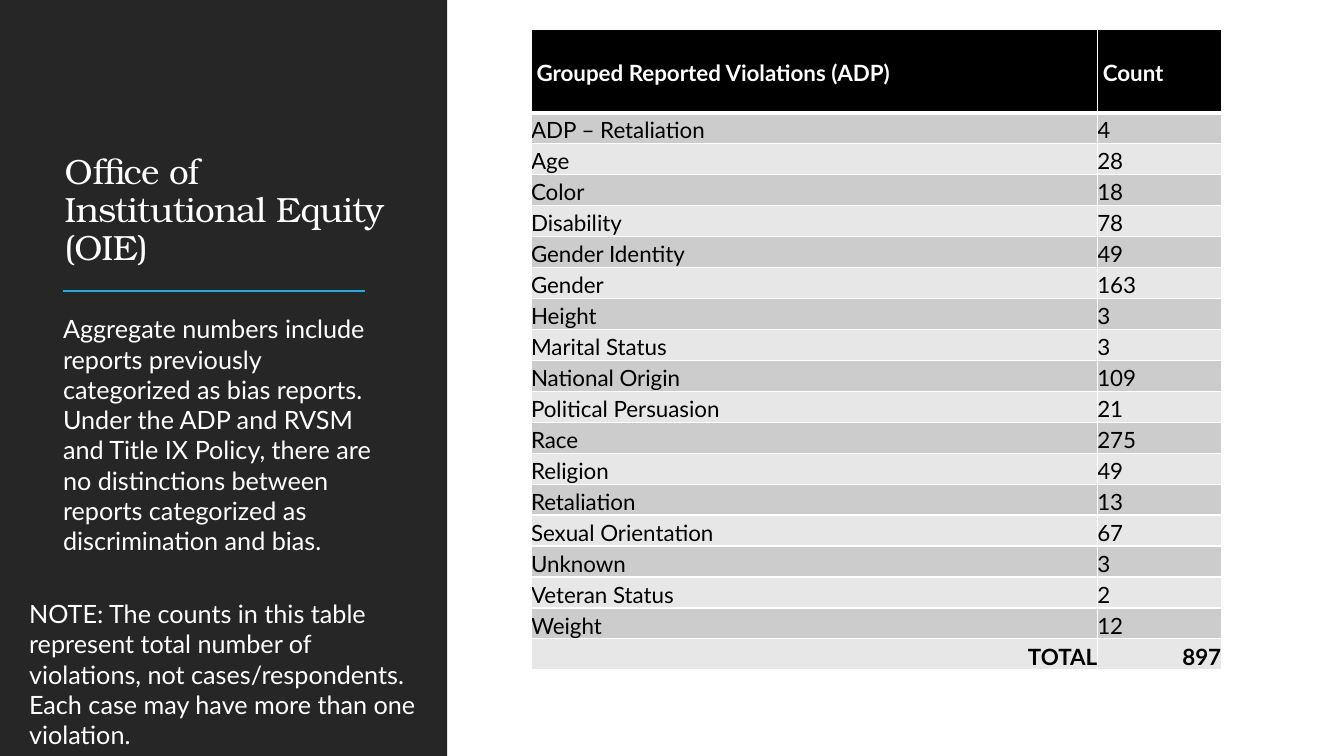
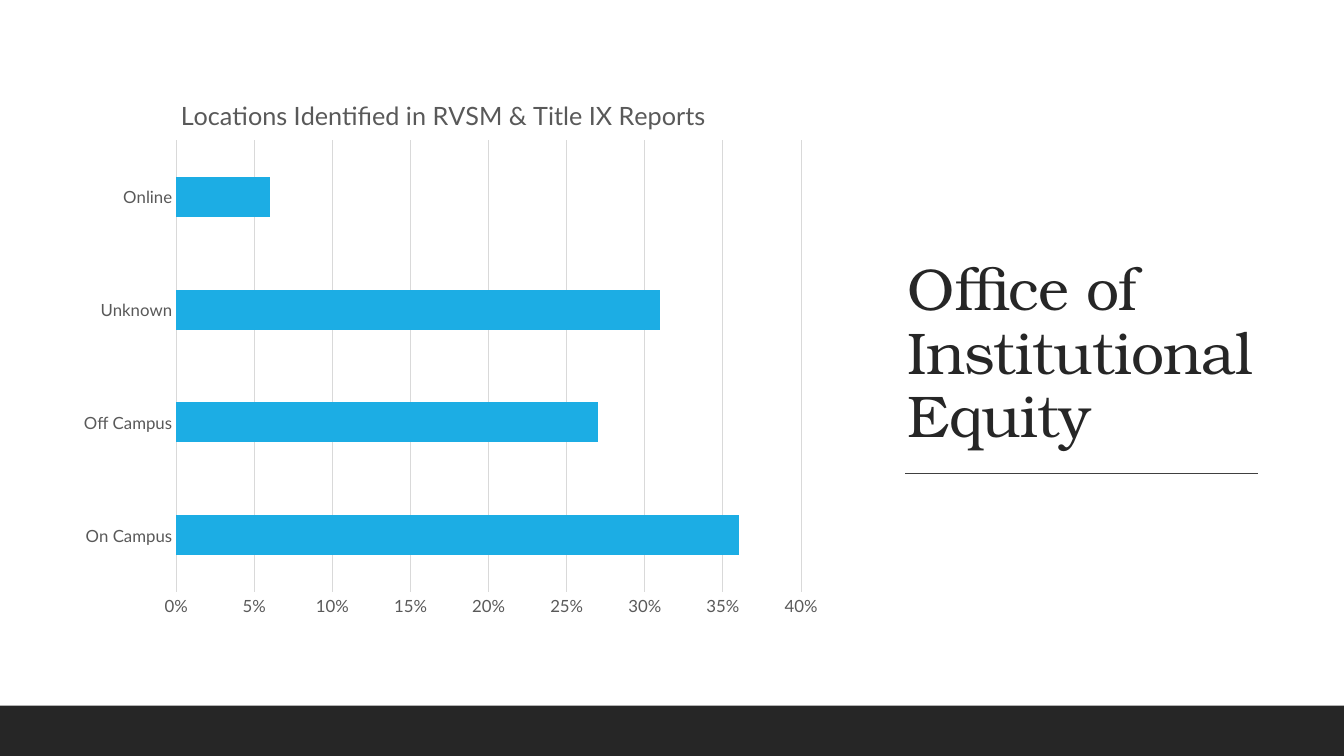
from dataclasses import dataclass
from typing import NamedTuple

from lxml.etree import SubElement
from pptx import Presentation
from pptx.chart.data import CategoryChartData
from pptx.dml.color import RGBColor
from pptx.enum.chart import XL_CHART_TYPE, XL_TICK_MARK
from pptx.enum.shapes import MSO_CONNECTOR, MSO_SHAPE
from pptx.enum.text import MSO_ANCHOR, MSO_AUTO_SIZE, PP_ALIGN
from pptx.oxml.ns import qn
from pptx.util import Pt


@dataclass(frozen=True)
class Theme:
    dark: str = "262626"
    white: str = "FFFFFF"
    black: str = "000000"
    accent: str = "1CADE4"
    rule: str = "404040"
    label: str = "595959"
    grid: str = "D9D9D9"
    row_odd: str = "CCCCCC"
    row_even: str = "E7E7E7"
    title_font: str = "TeX Gyre Bonum"
    body_font: str = "Lato"
    panel_title: float = 25
    big_title: float = 42
    body: float = 18
    table: float = 16
    axis: float = 12


class Box(NamedTuple):
    x: float
    y: float
    w: float
    h: float

    def pts(self):
        return [Pt(v) for v in self]


class Violation(NamedTuple):
    name: str
    count: int


class Location(NamedTuple):
    name: str
    share: float


T = Theme()
SLIDE_W, SLIDE_H = 960, 540
TITLE_ONLY = 5

VIOLATIONS = [
    Violation("ADP – Retaliation", 4),
    Violation("Age", 28),
    Violation("Color", 18),
    Violation("Disability", 78),
    Violation("Gender Identity", 49),
    Violation("Gender", 163),
    Violation("Height", 3),
    Violation("Marital Status", 3),
    Violation("National Origin", 109),
    Violation("Political Persuasion", 21),
    Violation("Race", 275),
    Violation("Religion", 49),
    Violation("Retaliation", 13),
    Violation("Sexual Orientation", 67),
    Violation("Unknown", 3),
    Violation("Veteran Status", 2),
    Violation("Weight", 12),
]

LOCATIONS = [
    Location("On Campus", 0.36),
    Location("Off Campus", 0.27),
    Location("Unknown", 0.31),
    Location("Online", 0.06),
]


# Shared parts
def rgb(color: str) -> RGBColor:
    return RGBColor.from_string(color)


def set_font(font, size: float, color: str, name: str = T.body_font, bold: bool = False) -> None:
    font.name, font.size, font.bold = name, Pt(size), bold
    font.color.rgb = rgb(color)


def add_title(s, text: str, box: Box, size: float, color: str):
    sp = s.shapes.title
    sp.left, sp.top, sp.width, sp.height = box.pts()
    tf = sp.text_frame
    tf.text = text
    tf.word_wrap = True
    tf.auto_size = MSO_AUTO_SIZE.NONE
    tf.vertical_anchor = MSO_ANCHOR.BOTTOM
    p = tf.paragraphs[0]
    p.alignment = PP_ALIGN.LEFT
    p.line_spacing = 0.9
    set_font(p.font, size, color, T.title_font)
    for props in sp.element.iter(qn("a:defRPr")):
        props.set("spc", "-50")


def add_band(s, box: Box) -> None:
    """Dark band, placed behind the title."""
    sp = s.shapes.add_shape(MSO_SHAPE.RECTANGLE, *box.pts())
    sp.shadow.inherit = False
    sp.fill.solid()
    sp.fill.fore_color.rgb = rgb(T.dark)
    sp.line.fill.background()
    s.shapes.title.element.addprevious(sp.element)


def add_rule(s, x: float, y: float, w: float, color: str, weight: float) -> None:
    line = s.shapes.add_connector(MSO_CONNECTOR.STRAIGHT, Pt(x), Pt(y), Pt(x + w), Pt(y))
    line.line.color.rgb = rgb(color)
    line.line.width = Pt(weight)
    SubElement(line.element.spPr, qn("a:effectLst"))


def add_text(s, text: str, box: Box, side_inset: float = 7.2) -> None:
    tf = s.shapes.add_textbox(*box.pts()).text_frame
    tf.word_wrap = True
    tf.margin_left = tf.margin_right = Pt(side_inset)
    tf.text = text
    set_font(tf.paragraphs[0].font, T.body, T.white)


# Table
def set_borders(cell, bottom: float) -> None:
    props = cell._tc.get_or_add_tcPr()
    widths = {"lnL": 1, "lnR": 1, "lnT": 1, "lnB": bottom}
    for i, (tag, width) in enumerate(widths.items()):
        ln = SubElement(props, qn(f"a:{tag}"), w=str(Pt(width)))
        fill = SubElement(ln, qn("a:solidFill"))
        SubElement(fill, qn("a:srgbClr"), val=T.white)
        props.insert(i, ln)


def fill_cell(cell, text: str, fill: str, header: bool, total: bool) -> None:
    cell.fill.solid()
    cell.fill.fore_color.rgb = rgb(fill)
    cell.margin_left = Pt(4 if header else 0)
    cell.margin_right = cell.margin_bottom = 0
    cell.margin_top = Pt(2.9)
    cell.vertical_anchor = MSO_ANCHOR.MIDDLE if header else MSO_ANCHOR.BOTTOM
    cell.text = text
    p = cell.text_frame.paragraphs[0]
    p.alignment = PP_ALIGN.RIGHT if total else PP_ALIGN.LEFT
    set_font(p.font, T.table, T.white if header else T.black, bold=header or total)
    set_borders(cell, 3 if header else 1)


def add_violations_table(s, x: float, y: float) -> None:
    widths, header_h, row_h = (404.5, 88.5), 59.3, 22.05
    total = sum(v.count for v in VIOLATIONS)
    rows = [("Grouped Reported Violations (ADP)", "Count"), *VIOLATIONS, ("TOTAL", total)]
    last = len(rows) - 1
    box = Box(x, y, sum(widths), header_h + last * row_h)
    table = s.shapes.add_table(len(rows), len(widths), *box.pts()).table
    for column, width in zip(table.columns, widths):
        column.width = Pt(width)
    for i, row in enumerate(rows):
        table.rows[i].height = Pt(row_h if i else header_h)
        fill = (T.row_odd if i % 2 else T.row_even) if i else T.black
        for j, value in enumerate(row):
            fill_cell(table.cell(i, j), str(value), fill, i == 0, i == last)


# Chart
def set_layout(parent, index: int, target: str = "", **fractions: float) -> None:
    """Place a chart part by fractions of the chart area."""
    for old in parent.findall(qn("c:layout")):
        parent.remove(old)
    layout = SubElement(parent, qn("c:layout"))
    parent.insert(index, layout)
    manual = SubElement(layout, qn("c:manualLayout"))
    if target:
        SubElement(manual, qn("c:layoutTarget"), val=target)
    for edge in "xy":
        SubElement(manual, qn(f"c:{edge}Mode"), val="edge")
    for key, value in fractions.items():
        SubElement(manual, qn(f"c:{key}"), val=str(value))


def format_axis(axis) -> None:
    axis.major_tick_mark = axis.minor_tick_mark = XL_TICK_MARK.NONE
    set_font(axis.tick_labels.font, T.axis, T.label)


def add_locations_chart(s, box: Box) -> None:
    data = CategoryChartData(number_format="0%")
    data.categories = [loc.name for loc in LOCATIONS]
    data.add_series("Series 1", [loc.share for loc in LOCATIONS])
    chart = s.shapes.add_chart(XL_CHART_TYPE.BAR_CLUSTERED, *box.pts(), data).chart
    set_font(chart.font, 10, T.black)
    chart.has_legend = False

    chart.has_title = True
    title = chart.chart_title
    title.text_frame.text = "Locations Identified in RVSM & Title IX Reports"
    set_font(title.text_frame.paragraphs[0].font, T.body, T.label)
    set_layout(title.element, 1, x=0.14, y=0.04)
    plot_area = chart.element.find(".//" + qn("c:plotArea"))
    set_layout(plot_area, 0, "inner", x=0.14, y=0.125, w=0.82, h=0.81)

    plot = chart.plots[0]
    plot.gap_width = 182
    plot.vary_by_categories = False
    bars = plot.series[0].format.fill
    bars.solid()
    bars.fore_color.rgb = rgb(T.accent)

    format_axis(chart.category_axis)
    format_axis(chart.value_axis)
    values = chart.value_axis
    values.minimum_scale, values.maximum_scale, values.major_unit = 0, 0.4, 0.05
    values.tick_labels.number_format = "0%"
    values.tick_labels.number_format_is_linked = False
    values.format.line.fill.background()
    for line in (chart.category_axis.format.line, values.major_gridlines.format.line):
        line.color.rgb = rgb(T.grid)
        line.width = Pt(0.75)


# Slides
def build_violations(prs) -> None:
    s = prs.slides.add_slide(prs.slide_layouts[TITLE_ONLY])
    add_title(s, "Office of Institutional Equity (OIE)", Box(39, 41, 242.5, 154), T.panel_title, T.white)
    add_band(s, Box(0, 0, 319.5, SLIDE_H))
    add_rule(s, 45, 208, 216, T.accent, 1.5)
    add_text(
        s,
        "Aggregate numbers include reports previously categorized as bias reports. "
        "Under the ADP and RVSM and Title IX Policy, there are no distinctions between "
        "reports categorized as discrimination and bias.",
        Box(45, 220.5, 237, 251),
        side_inset=0,
    )
    add_violations_table(s, 379.3, 21.2)
    add_text(
        s,
        "NOTE: The counts in this table represent total number of violations, not "
        "cases/respondents. Each case may have more than one violation.",
        Box(13.7, 424, 292.5, 94.5),
    )


def build_locations(prs) -> None:
    s = prs.slides.add_slide(prs.slide_layouts[TITLE_ONLY])
    add_title(s, "Office of Institutional Equity", Box(641, 50.5, 268, 275), T.big_title, T.dark)
    add_band(s, Box(0, 504, SLIDE_W, 36))
    add_rule(s, 646.5, 338.2, 252, T.rule, 1)
    add_locations_chart(s, Box(49.7, 50.4, 544.3, 398.2))


def main() -> None:
    prs = Presentation()
    prs.slide_width, prs.slide_height = Pt(SLIDE_W), Pt(SLIDE_H)
    build_violations(prs)
    build_locations(prs)
    prs.save("out.pptx")


if __name__ == "__main__":
    main()
